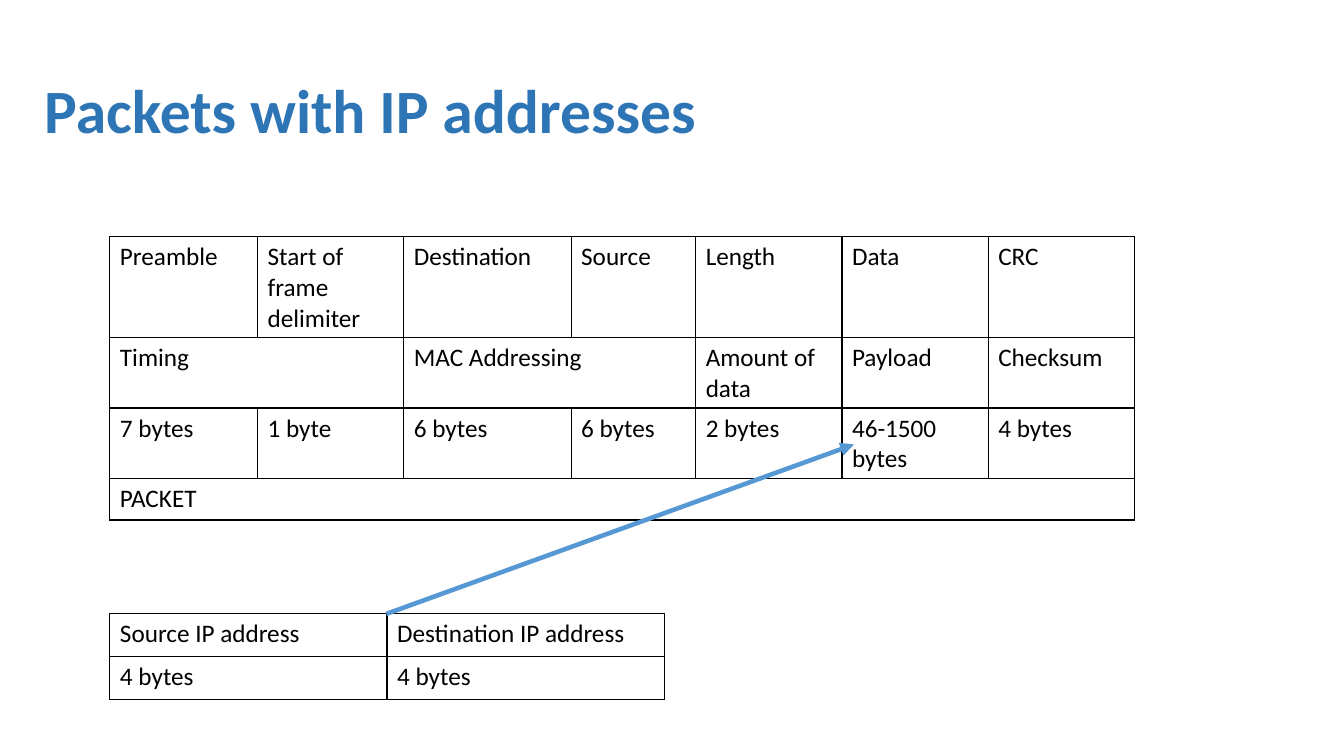
from lxml.etree import SubElement
from pptx import Presentation
from pptx.dml.color import RGBColor
from pptx.enum.shapes import MSO_CONNECTOR
from pptx.enum.text import MSO_ANCHOR
from pptx.oxml.ns import qn
from pptx.util import Pt

FRAME_ROWS = [
    ["Preamble", "Start of frame delimiter", "Destination", "Source", "Length", "Data", "CRC"],
    ["Timing", None, "MAC Addressing", None, "Amount of data", "Payload", "Checksum"],
    ["7 bytes", "1 byte", "6 bytes", "6 bytes", "2 bytes", "46-1500 bytes", "4 bytes"],
    ["PACKET"] + [None] * 6,
]
IP_ROWS = [
    ["Source IP address", "Destination IP address"],
    ["4 bytes", "4 bytes"],
]


def rgb(color):
    """Turn a hex string into a colour."""
    return RGBColor.from_string(color)


def set_font(p, size, color, bold=False):
    """Set the font of a whole paragraph."""
    p.font.name = "Calibri"
    p.font.size = Pt(size)
    p.font.bold = bold
    p.font.color.rgb = rgb(color)


def add_title(s, text, x, y, w, h):
    """Add the slide heading."""
    tf = s.shapes.add_textbox(Pt(x), Pt(y), Pt(w), Pt(h)).text_frame
    tf.word_wrap = True
    tf.vertical_anchor = MSO_ANCHOR.MIDDLE
    p = tf.paragraphs[0]
    p.text = text
    p.line_spacing = 0.9
    set_font(p, 44, "2E75B6", True)


def style_cell(cell):
    """Give a cell no fill and a thin black border on every side."""
    tcPr = cell._tc.get_or_add_tcPr()
    for side in ("a:lnL", "a:lnR", "a:lnT", "a:lnB"):
        ln = SubElement(tcPr, qn(side), w=str(Pt(1)))
        fill = SubElement(ln, qn("a:solidFill"))
        SubElement(fill, qn("a:srgbClr"), val="000000")
    cell.fill.background()


def add_grid(s, rows, x, y, widths, heights):
    """Add a bordered table; None continues the cell to its left."""
    table = s.shapes.add_table(len(rows), len(widths), Pt(x), Pt(y),
                               Pt(sum(widths)), Pt(sum(heights))).table
    table.first_row = table.horz_banding = False
    for column, width in zip(table.columns, widths):
        column.width = Pt(width)
    for i, (row, height) in enumerate(zip(rows, heights)):
        table.rows[i].height = Pt(height)
        for j, text in enumerate(row):
            cell = table.cell(i, j)
            style_cell(cell)
            if text is None:
                continue
            end = j
            while end + 1 < len(row) and row[end + 1] is None:
                end += 1
            if end > j:
                cell.merge(table.cell(i, end))
            p = cell.text_frame.paragraphs[0]
            p.text = text
            set_font(p, 18, "000000")


def add_arrow(s, x1, y1, x2, y2):
    """Add a straight arrow without a shadow."""
    arrow = s.shapes.add_connector(MSO_CONNECTOR.STRAIGHT, Pt(x1), Pt(y1), Pt(x2), Pt(y2))
    arrow.line.color.rgb = rgb("5698D3")
    arrow.line.width = Pt(3.25)
    SubElement(arrow.line._get_or_add_ln(), qn("a:tailEnd"), type="triangle")
    SubElement(arrow._element.spPr, qn("a:effectLst"))


def main():
    """Build the slide and save it."""
    prs = Presentation()
    prs.slide_width, prs.slide_height = Pt(960), Pt(540)
    s = prs.slides.add_slide(prs.slide_layouts[6])
    add_title(s, "Packets with IP addresses", 24.5, 28.8, 913, 104.4)
    add_grid(s, FRAME_ROWS, 78.5, 169, [105.5, 104.5, 119.5, 89] + [104.5] * 3,
             [72, 50.4, 50.4, 29.5])
    add_grid(s, IP_ROWS, 78.5, 438.3, [198] * 2, [30.6] * 2)
    add_arrow(s, 276, 438.5, 610, 317.5)
    prs.save("out.pptx")


if __name__ == "__main__":
    main()
